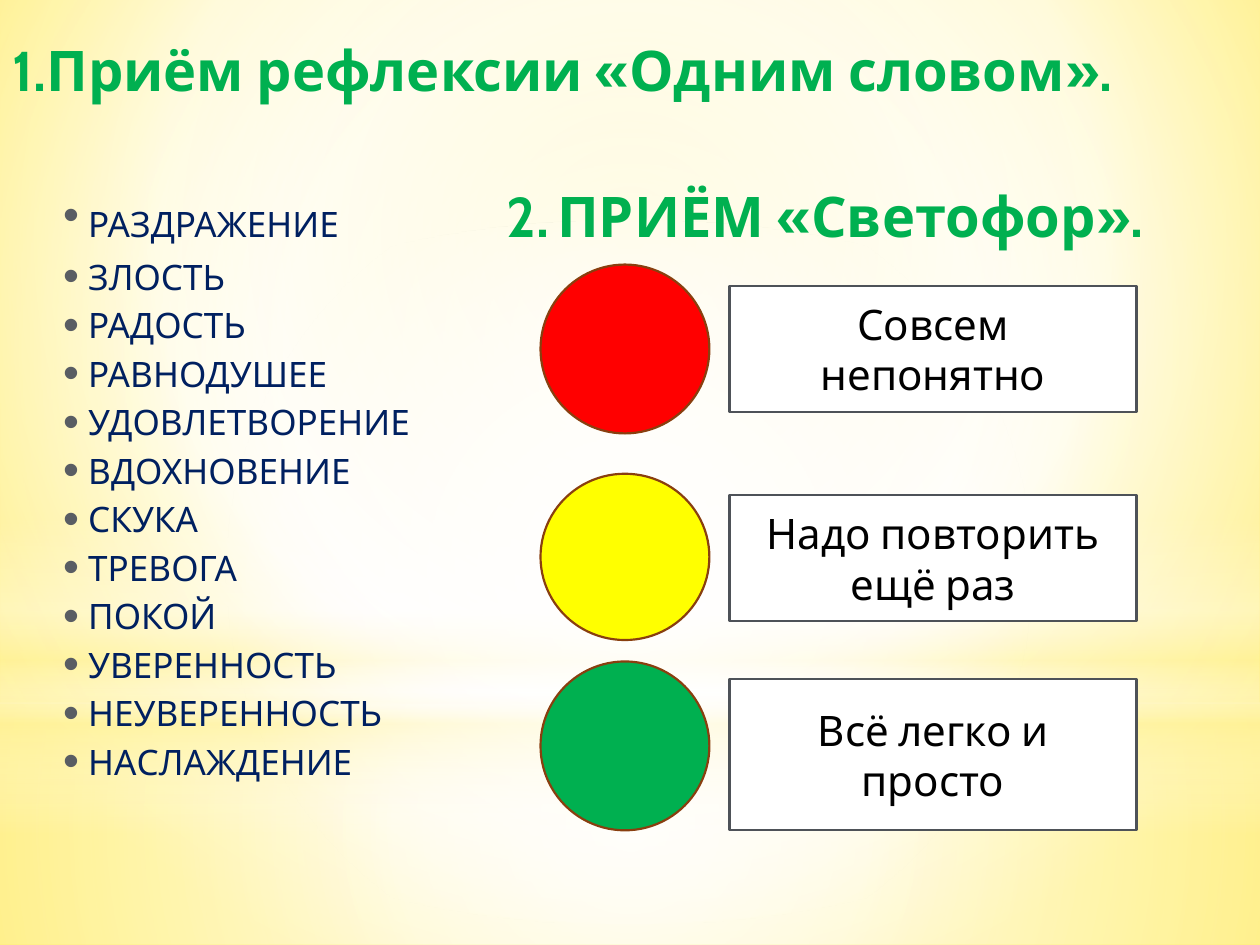
from lxml import etree
from pptx import Presentation
from pptx import util as u
from pptx.dml.color import RGBColor
from pptx.enum import shapes, text
from pptx.oxml.ns import qn

COLUMNS, ROWS = 100, 75
WIDTH, HEIGHT = u.Inches(10), u.Inches(7.5)

GREEN = RGBColor(0x00, 0xB0, 0x50)
NAVY = RGBColor(0x00, 0x20, 0x60)
RED = RGBColor(0xFF, 0x00, 0x00)
YELLOW = RGBColor(0xFF, 0xFF, 0x00)
WHITE = RGBColor(0xFF, 0xFF, 0xFF)
BLACK = RGBColor(0x00, 0x00, 0x00)
CREAM = RGBColor(0xFF, 0xF3, 0x9D)
LEMON = RGBColor(0xFF, 0xF1, 0x8D)
GOLD = RGBColor(0xFF, 0xE9, 0x4E)
BROWN = RGBColor(0x89, 0x3F, 0x0F)
GREY = RGBColor(0x4E, 0x52, 0x58)
BULLET_GREY = RGBColor(0x59, 0x5D, 0x63)

HEADING = {"name": "Cabin", "size": u.Pt(32), "bold": True}
WORD = {"name": "Cabin", "size": u.Pt(20), "bold": False}
ANSWER = {"name": "Cabin", "size": u.Pt(24)}

FEELINGS = ["РАЗДРАЖЕНИЕ", "ЗЛОСТЬ", "РАДОСТЬ", "РАВНОДУШЕЕ", "УДОВЛЕТВОРЕНИЕ",
            "ВДОХНОВЕНИЕ", "СКУКА", "ТРЕВОГА", "ПОКОЙ", "УВЕРЕННОСТЬ",
            "НЕУВЕРЕННОСТЬ", "НАСЛАЖДЕНИЕ"]

# Lamp colour, lamp row and height, answer, answer row and height
LIGHTS = [
    (RED, 21, 13.4, "Совсем непонятно", 22.7, 10),
    (YELLOW, 37.6, 13.2, "Надо повторить ещё раз", 39.3, 10),
    (GREEN, 52.5, 13.4, "Всё легко и просто", 53.9, 12),
]

CENTRE = (50, 50, 50, 50)
# Preset, top row, height in rows, stops (position, colour, opacity), focus
GLOWS = [
    (shapes.MSO_SHAPE.RECTANGLE, 55.8, 19.2,
     [(0, WHITE, 91), (37, WHITE, 76), (100, CREAM, 79)], CENTRE),
    (shapes.MSO_SHAPE.RECTANGLE, 0, 55.8,
     [(0, WHITE, 89), (48, WHITE, 62), (100, CREAM, 79)], CENTRE),
    (shapes.MSO_SHAPE.RECTANGLE, 41.2, 25,
     [(0, WHITE, 0), (29, WHITE, 30), (45, CREAM, 40), (55, WHITE, 26),
      (65, CREAM, 60), (100, WHITE, 0)], None),
    (shapes.MSO_SHAPE.OVAL, 17.5, 55.8,
     [(0, WHITE, 100), (56, WHITE, 0)], CENTRE),
]


def on_grid(column, row, columns, rows):
    return (int(WIDTH * column / COLUMNS), int(HEIGHT * row / ROWS),
            int(WIDTH * columns / COLUMNS), int(HEIGHT * rows / ROWS))


def move(placeholder, *cells):
    sides = ("left", "top", "width", "height")
    for side, length in zip(sides, on_grid(*cells)):
        setattr(placeholder, side, length)


def child(parent, tag, **attributes):
    return etree.SubElement(parent, qn(tag),
                            {key: str(value) for key, value in attributes.items()})


def set_gradient(fill, owner, stops, focus):
    """Fill with a circle around focus, or from top to bottom without one."""
    fill.solid()
    solid = owner.find(qn("a:solidFill"))
    gradient = etree.Element(qn("a:gradFill"), rotWithShape="1")
    stop_list = child(gradient, "a:gsLst")
    for position, color, opacity in stops:
        stop = child(stop_list, "a:gs", pos=position * 1000)
        tint = child(stop, "a:srgbClr", val=color)
        if opacity < 100:
            child(tint, "a:alpha", val=opacity * 1000)
    if focus:
        circle = child(gradient, "a:path", path="circle")
        edges = {side: share * 1000 for side, share in zip("ltrb", focus)}
        child(circle, "a:fillToRect", **edges)
    else:
        child(gradient, "a:lin", ang=90 * 60000, scaled=0)
    owner.replace(solid, gradient)


def add_backdrop(slide):
    fill = slide.background.fill
    fill.solid()
    set_gradient(fill, slide.element.find(".//" + qn("p:bgPr")),
                 [(0, LEMON, 100), (60, WHITE, 100), (100, GOLD, 100)],
                 (20, 10, 20, 60))
    tree = slide.shapes.element
    for depth, (preset, row, rows, stops, focus) in enumerate(GLOWS):
        glow = slide.shapes.add_shape(preset, *on_grid(0, row, COLUMNS, rows))
        glow.shadow.inherit = False
        glow.line.fill.background()
        set_gradient(glow.fill, glow.element.spPr, stops, focus)
        tree.insert(2 + depth, glow.element)


def add_run(paragraph, wording, style, color):
    run = paragraph.add_run()
    run.text = wording
    for attribute, value in style.items():
        setattr(run.font, attribute, value)
    run.font.color.rgb = color


def set_indent(paragraph, margin, hanging):
    properties = paragraph._p.get_or_add_pPr()
    properties.set("marL", str(u.Inches(margin)))
    properties.set("indent", str(-u.Inches(hanging)))
    return properties


def set_frame(placeholder):
    frame = placeholder.text_frame
    frame.word_wrap = True
    frame.auto_size = text.MSO_AUTO_SIZE.NONE
    frame.vertical_anchor = text.MSO_ANCHOR.TOP
    return frame


def add_title(slide):
    title = slide.shapes.title
    move(title, 0, 2.3, 97.2, 7.8)
    line = set_frame(title).paragraphs[0]
    line.alignment = text.PP_ALIGN.LEFT
    set_indent(line, 0.35, 0.35)
    add_run(line, "1.Приём рефлексии «Одним словом».", HEADING, GREEN)


def add_feelings(slide):
    body = slide.placeholders[1]
    move(body, 3.5, 13.9, 92.1, 55.9)
    frame = set_frame(body)
    for index, feeling in enumerate(FEELINGS):
        line = frame.add_paragraph() if index else frame.paragraphs[0]
        line.space_before = u.Pt(0.7 if index else 0)
        line.space_after = u.Pt(3)
        properties = set_indent(line, 0.25, 0.2)
        child(child(properties, "a:buClr"), "a:srgbClr", val=BULLET_GREY)
        child(properties, "a:buSzPct", val=130000)
        child(properties, "a:buChar", char="•")
        add_run(line, feeling, WORD, NAVY)
        if index == 0:
            tabs = child(properties, "a:tabLst")
            child(tabs, "a:tab", pos=u.Inches(3.57), algn="l")
            add_run(line, "\t2.", HEADING, GREEN)
            add_run(line, " ", WORD, NAVY)
            add_run(line, "ПРИЁМ «Светофор».", HEADING, GREEN)


def add_outlined(slide, preset, cells, color, outline):
    figure = slide.shapes.add_shape(preset, *on_grid(*cells))
    figure.shadow.inherit = False
    figure.fill.solid()
    figure.fill.fore_color.rgb = color
    figure.line.color.rgb = outline
    figure.line.width = u.Pt(1.25)
    return figure


def add_traffic_light(slide):
    for color, row, rows, *_ in LIGHTS:
        add_outlined(slide, shapes.MSO_SHAPE.OVAL,
                     (42.9, row, 13.4, rows), color, BROWN)
    for *_, answer, row, rows in LIGHTS:
        card = add_outlined(slide, shapes.MSO_SHAPE.RECTANGLE,
                            (57.9, row, 32.3, rows), WHITE, GREY)
        frame = card.text_frame
        frame.word_wrap = True
        frame.vertical_anchor = text.MSO_ANCHOR.MIDDLE
        line = frame.paragraphs[0]
        line.alignment = text.PP_ALIGN.CENTER
        add_run(line, answer, ANSWER, BLACK)


def main():
    deck = Presentation()
    deck.slide_width, deck.slide_height = WIDTH, HEIGHT
    slide = deck.slides.add_slide(deck.slide_layouts[1])
    add_backdrop(slide)
    add_title(slide)
    add_feelings(slide)
    add_traffic_light(slide)
    deck.save("out.pptx")


if __name__ == "__main__":
    main()
